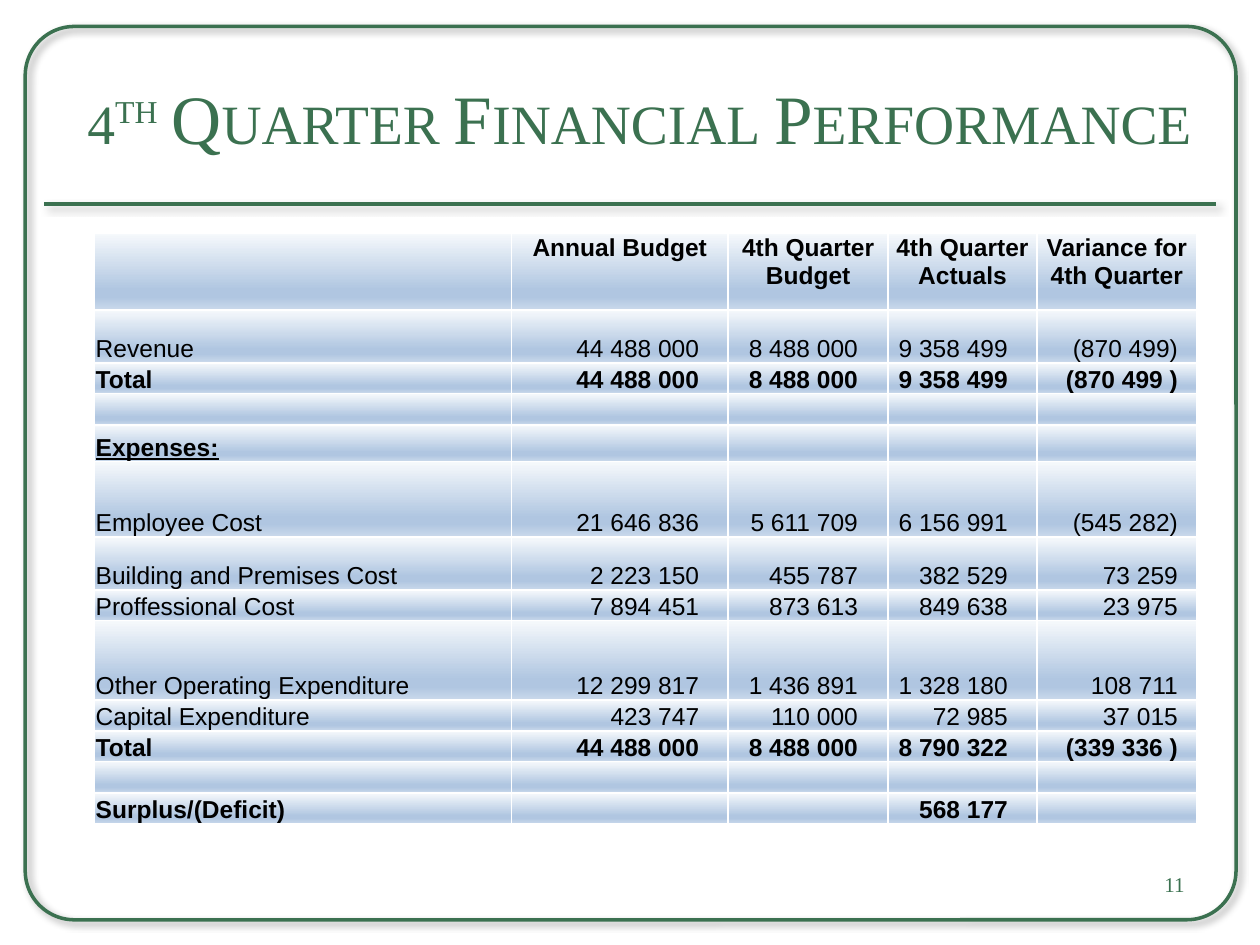
"""Build the fourth-quarter financial performance slide."""
from dataclasses import dataclass

import pptx
import pptx.dml.color
import pptx.enum.shapes
import pptx.enum.text
import pptx.oxml
import pptx.oxml.ns
import pptx.util
from lxml import etree
from pptx.util import Inches

ALIGN = pptx.enum.text.PP_ALIGN
ANCHOR = pptx.enum.text.MSO_ANCHOR
qn = pptx.oxml.ns.qn


@dataclass(frozen=True)
class Theme:
    """Colours, fonts and type sizes of the slide."""
    green: str = "3B7150"
    ink: str = "000000"
    border: str = "FFFFFF"
    gradient: tuple = ((0, "F6F9FC"), (74, "B0C6E1"), (83, "B0C6E1"), (100, "CAD9EB"))
    display_font: str = "Times New Roman"
    table_font: str = "Arial"
    title_size: float = 39.6
    table_size: int = 14
    number_size: int = 12
    rule_width: int = 2


THEME = Theme()
HEADINGS = ("", "Annual Budget", "4th Quarter Budget", "4th Quarter Actuals",
            "Variance for 4th Quarter")
FINANCES = (
    (0.61, *HEADINGS),
    (0.42, "Revenue", "44 488 000", "8 488 000", "9 358 499", "(870 499)"),
    (0.23, "Total", "44 488 000", "8 488 000", "9 358 499", "(870 499 )"),
    (0.25, "", "", "", "", ""),
    (0.29, "Expenses:", "", "", "", ""),
    (0.6, "Employee Cost", "21 646 836", "5 611 709", "6 156 991", "(545 282)"),
    (0.42, "Building and Premises Cost", "2 223 150", "455 787", "382 529", "73 259"),
    (0.23, "Proffessional Cost", "7 894 451", "873 613", "849 638", "23 975"),
    (0.63, "Other Operating Expenditure", "12 299 817", "1 436 891", "1 328 180", "108 711"),
    (0.22, "Capital Expenditure", "423 747", "110 000", "72 985", "37 015"),
    (0.23, "Total", "44 488 000", "8 488 000", "8 790 322", "(339 336 )"),
    (0.25, "", "", "", "", ""),
    (0.23, "Surplus/(Deficit)", "", "", "568 177", ""),
)
COLUMN_WIDTHS = (3.31, 1.72, 1.27, 1.18, 1.27)
FIGURE_INSETS = (0.01, 0.23, 0.24, 0.23, 0.15)
BOLD_LABELS = ("", "Total", "Expenses:", "Surplus/(Deficit)")


def rgb(hex_colour):
    """Turn a hex string into a colour."""
    return pptx.dml.color.RGBColor.from_string(hex_colour)


def style_font(font, face, size, colour, bold=False):
    """Set the face, size, colour and weight of a font."""
    font.name = face
    font.size = pptx.util.Pt(size)
    font.color.rgb = rgb(colour)
    font.bold = bold


def add_colour(parent, hex_colour):
    """Append a colour element and return it."""
    return etree.SubElement(parent, qn("a:srgbClr"), val=hex_colour)


def style_outline(outlined):
    """Give a frame or rule its green line and soft shadow."""
    outlined.line.color.rgb = rgb(THEME.green)
    outlined.line.width = pptx.util.Pt(THEME.rule_width)
    effects = etree.SubElement(outlined._element.spPr, qn("a:effectLst"))
    shadow = etree.SubElement(
        effects, qn("a:outerShdw"), blurRad=str(pptx.util.Pt(4)),
        dist=str(pptx.util.Pt(3)), dir="2700000", algn="tl", rotWithShape="0")
    etree.SubElement(add_colour(shadow, THEME.ink), qn("a:alpha"), val="40000")


def add_frame(slide):
    """Draw the rounded page frame and the rule below the title."""
    frame = slide.shapes.add_shape(
        pptx.enum.shapes.MSO_SHAPE.ROUNDED_RECTANGLE,
        Inches(0.2), Inches(0.21), Inches(9.61), Inches(7.09))
    frame.adjustments[0] = 0.055
    frame.fill.background()
    style_outline(frame)
    rule = slide.shapes.add_connector(
        pptx.enum.shapes.MSO_CONNECTOR.STRAIGHT,
        Inches(0.35), Inches(1.62), Inches(9.65), Inches(1.62))
    style_outline(rule)


def add_display_text(slide, box, parts, size, align):
    """Add a green text box and return its runs."""
    holder = slide.shapes.add_textbox(*(Inches(length) for length in box))
    holder.text_frame.word_wrap = True
    holder.text_frame.vertical_anchor = ANCHOR.MIDDLE
    paragraph = holder.text_frame.paragraphs[0]
    paragraph.alignment = align
    for part in parts:
        run = paragraph.add_run()
        run.text = part
        style_font(run.font, THEME.display_font, size, THEME.green)
    return paragraph.runs


def add_title(slide):
    """Add the small-caps title with its raised ordinal."""
    runs = add_display_text(slide, (0.5, 0.3, 9.15, 1.25),
                            ("4", "th", " Quarter Financial Performance"),
                            THEME.title_size, ALIGN.CENTER)
    for run in runs:
        run.font._element.set("cap", "small")
    runs[1].font._element.set("baseline", "30000")


def paint_cell(cell):
    """Give a cell white borders and the blue gradient."""
    properties = cell._tc.get_or_add_tcPr()
    for side in ("a:lnL", "a:lnR", "a:lnT", "a:lnB"):
        border = etree.SubElement(properties, qn(side), w=str(pptx.util.Pt(1)))
        add_colour(etree.SubElement(border, qn("a:solidFill")), THEME.border)
    gradient = etree.SubElement(properties, qn("a:gradFill"), rotWithShape="1")
    stops = etree.SubElement(gradient, qn("a:gsLst"))
    for percent, colour in THEME.gradient:
        add_colour(etree.SubElement(stops, qn("a:gs"), pos=str(percent * 1000)), colour)
    etree.SubElement(gradient, qn("a:lin"), ang="5400000", scaled="0")


def fill_cell(cell, content, align, right_inset, bold):
    """Write one table entry and set its layout."""
    cell.margin_left = cell.margin_top = Inches(0.01)
    cell.margin_right = Inches(right_inset)
    cell.margin_bottom = 0
    paint_cell(cell)
    paragraph = cell.text_frame.paragraphs[0]
    paragraph.alignment = align
    if not content:
        etree.SubElement(paragraph._p, qn("a:endParaRPr"), sz=str(THEME.table_size * 100))
        return
    paragraph.text = content
    font = paragraph.runs[0].font
    style_font(font, THEME.table_font, THEME.table_size, THEME.ink, bold)
    if content == "Expenses:":
        font.underline = True


def add_finance_table(slide):
    """Add the table of budgets, actuals and variances."""
    table = slide.shapes.add_table(
        len(FINANCES), len(COLUMN_WIDTHS), Inches(0.75), Inches(1.85),
        Inches(sum(COLUMN_WIDTHS)), Inches(sum(row[0] for row in FINANCES))).table
    table.first_row = table.horz_banding = False
    for column, width in zip(table.columns, COLUMN_WIDTHS):
        column.width = Inches(width)
    for row_index, (height, *entries) in enumerate(FINANCES):
        table.rows[row_index].height = Inches(height)
        bold = entries[0] in BOLD_LABELS
        for column_index, content in enumerate(entries):
            cell = table.cell(row_index, column_index)
            if row_index == 0:
                fill_cell(cell, content, ALIGN.CENTER, 0.01, bold)
            else:
                cell.vertical_anchor = ANCHOR.BOTTOM
                align = ALIGN.RIGHT if column_index else ALIGN.LEFT
                fill_cell(cell, content, align, FIGURE_INSETS[column_index], bold)


def main():
    """Build and save the slide."""
    deck = pptx.Presentation()
    deck.slide_width, deck.slide_height = Inches(10), Inches(7.5)
    slide = deck.slides.add_slide(deck.slide_layouts[6])
    add_frame(slide)
    add_title(slide)
    add_display_text(slide, (7.17, 6.82, 2.33, 0.4), ("11",),
                     THEME.number_size, ALIGN.RIGHT)
    add_finance_table(slide)
    deck.save("out.pptx")


if __name__ == "__main__":
    main()
